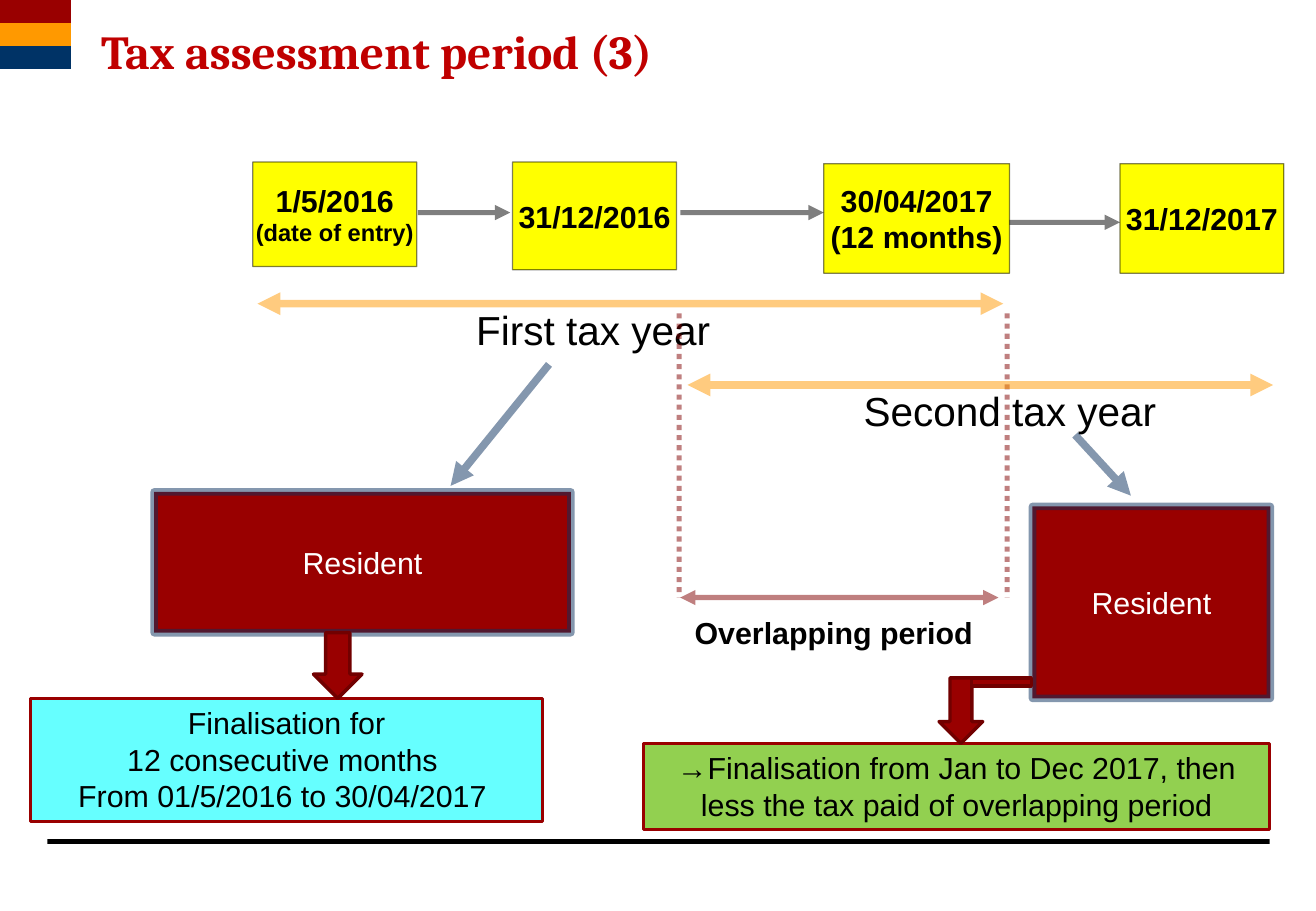
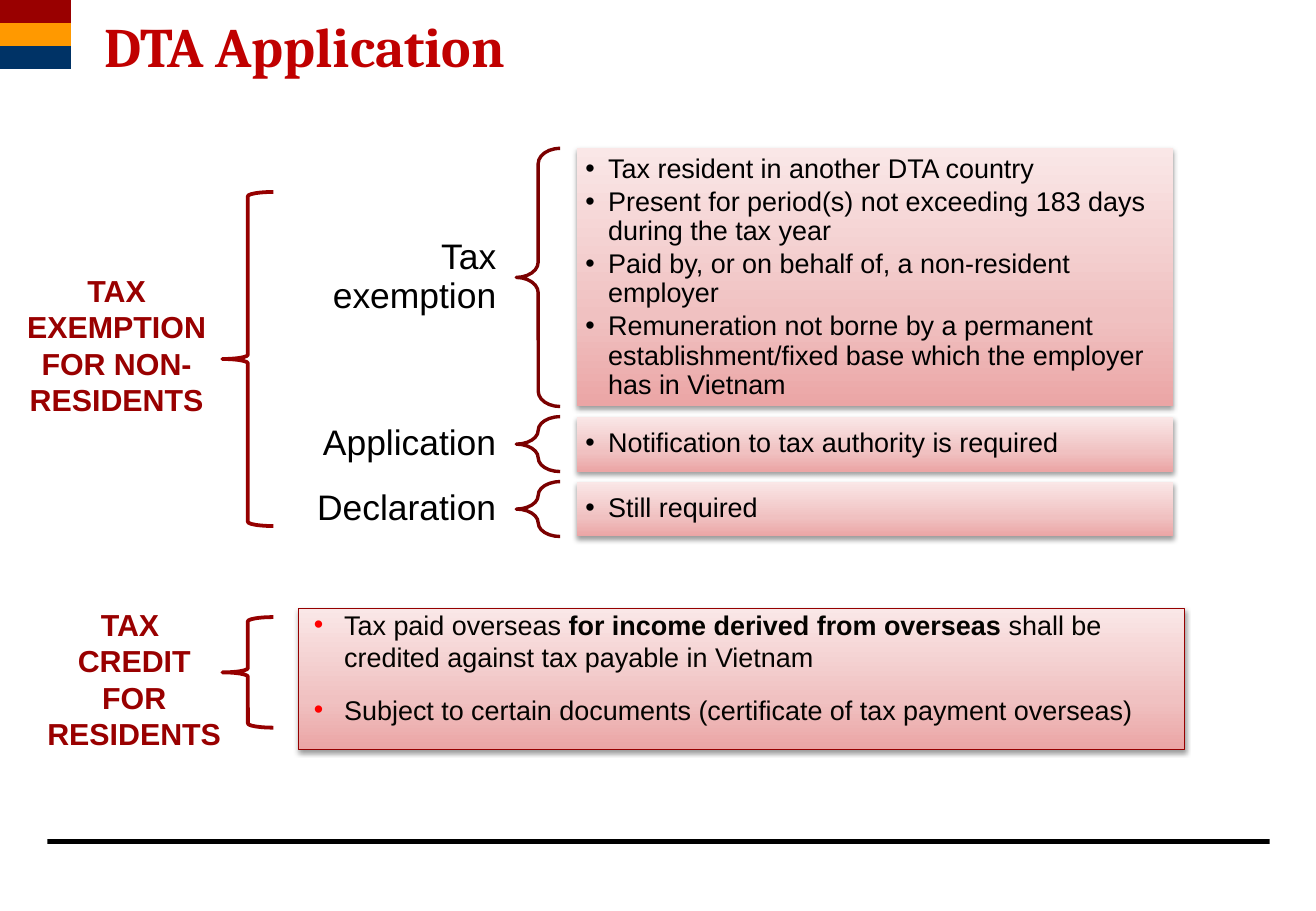
"""Build two slides on tax assessment periods and double tax agreements."""
from dataclasses import dataclass

from lxml import etree
from pptx import Presentation
from pptx import util as u
from pptx.dml.color import RGBColor
from pptx.enum import dml, shapes, text
from pptx.oxml.ns import qn


@dataclass(frozen=True)
class Theme:
    black: str = "000000"
    white: str = "FFFFFF"
    title: str = "C00000"
    maroon: str = "990000"
    orange: str = "FF9900"
    navy: str = "003366"
    yellow: str = "FFFF00"
    cyan: str = "66FFFF"
    green: str = "92D050"
    steel: str = "0A305E"
    overlap: str = "800000"
    arrow_edge: str = "710000"
    row_brace: str = "7B0000"
    group_brace: str = "960000"
    bullet: str = "FF0000"
    ink: str = "040300"
    blush: tuple = ((0, "EBA5A5"), (35, "F0C1C1"), (100, "FAE7E7"))
    font: str = "Arial"
    title_font: str = "Cambria"
    small: int = 14
    list_size: int = 16
    body: int = 18
    tag: int = 21
    label: int = 24


theme = Theme()
Shape = shapes.MSO_SHAPE
Anchor = text.MSO_ANCHOR
Align = text.PP_ALIGN


def write(box, *lines, size=theme.body, color=theme.black, font=theme.font, bold=False,
          align=Align.CENTER, anchor=Anchor.MIDDLE, wrap=True, inset=(7.2, 3.6, 7.2, 3.6),
          spacing=None, before=0, after=0, hang=None, bullet_color=None):
    """Write one paragraph per line; parts between double asterisks are bold."""
    frame = box.text_frame
    frame.auto_size = text.MSO_AUTO_SIZE.NONE
    frame.word_wrap = wrap
    frame.vertical_anchor = anchor
    (frame.margin_left, frame.margin_top,
     frame.margin_right, frame.margin_bottom) = map(u.Pt, inset)
    for index, line in enumerate(lines):
        para = frame.add_paragraph() if index else frame.paragraphs[0]
        para.alignment = align
        para.line_spacing = spacing
        para.space_before = u.Pt(before if index else 0)
        para.space_after = u.Pt(after)
        if hang:
            indent, step = map(u.Pt, hang)
            layout = para._p.get_or_add_pPr()
            layout.set("marL", str(indent))
            layout.set("indent", str(-step))
            tint = etree.SubElement(layout, qn("a:buClr"))
            etree.SubElement(tint, qn("a:srgbClr"), val=bullet_color or color)
            etree.SubElement(layout, qn("a:buFont"), typeface=theme.font)
            etree.SubElement(layout, qn("a:buChar"), char="•")
        for part, words in enumerate(line.split("**")):
            span = para.add_run()
            span.text = words
            span.font.name = font
            span.font.size = u.Pt(size)
            span.font.bold = bold or part % 2 == 1
            span.font.color.rgb = RGBColor.from_string(color)


def paint(item, fill=None, line=None, width=0.75, faded=False):
    """Set fill, line and shadow; a tuple of stops gives a shaded, shadowed panel."""
    parts = item.element.spPr
    if isinstance(fill, tuple):
        item.fill.gradient()
        item.fill.gradient_angle = 90
        stops = parts.find(".//" + qn("a:gsLst"))
        for stop in list(stops):
            stops.remove(stop)
        for position, color in fill:
            stop = etree.SubElement(stops, qn("a:gs"), pos=str(position * 1000))
            etree.SubElement(stop, qn("a:srgbClr"), val=color)
    elif fill:
        item.fill.solid()
        item.fill.fore_color.rgb = RGBColor.from_string(fill)
    elif hasattr(item, "fill"):
        item.fill.background()
    if line:
        item.line.color.rgb = RGBColor.from_string(line)
        item.line.width = u.Pt(width)
        if faded:
            color = parts.xpath("a:ln/a:solidFill/a:srgbClr")[0]
            etree.SubElement(color, qn("a:alpha"), val="50000")
    else:
        item.line.fill.background()
    effects = etree.SubElement(parts, qn("a:effectLst"))
    if isinstance(fill, tuple):
        shadow = etree.SubElement(effects, qn("a:outerShdw"), blurRad=str(u.Pt(3.1)),
                                  dist=str(u.Pt(1.6)), dir="5400000", rotWithShape="0")
        color = etree.SubElement(shadow, qn("a:srgbClr"), val=theme.black)
        etree.SubElement(color, qn("a:alpha"), val="38000")


deck = Presentation()
deck.slide_width, deck.slide_height = u.Pt(780), u.Pt(540)
period = deck.slides.add_slide(deck.slide_layouts[5])
treaty = deck.slides.add_slide(deck.slide_layouts[1])

bands = [((0, index * 13.6, 42, 13.6), color)
         for index, color in enumerate((theme.maroon, theme.orange, theme.navy))]
bands.append(((28, 497.4, 724.5, 2.8), theme.black))
for place, color in bands:
    band = period.shapes.add_shape(Shape.RECTANGLE, *map(u.Pt, place))
    paint(band, color)
    deck.slide_master.shapes.element.insert(2, band.element)

for page, words, left, top, size in (
    (period, "Tax assessment period (3)", 60, 0, 28),
    (treaty, "DTA Application", 62, -3, 33),
):
    title = page.shapes.title
    title.left, title.top, title.width, title.height = map(u.Pt, (left, top, 717, 62.6))
    write(title, words, size=size, color=theme.title, font=theme.title_font, bold=True,
          align=Align.LEFT, inset=(0, 2.9, 0, 0), spacing=0.85)

dates = (
    ((149.8, 96, 97.2, 62), ("1/5/2016", "(date of entry)")),
    ((303.8, 96, 97.2, 64), ("31/12/2016",)),
    ((488.2, 97, 110.2, 65), ("30/04/2017", "(12 months)")),
    ((663.8, 97, 97.2, 65), ("31/12/2017",)),
)
for place, lines in dates:
    box = period.shapes.add_shape(Shape.RECTANGLE, *map(u.Pt, place))
    paint(box, theme.yellow, theme.black, faded=True)
    write(box, *lines, bold=True, wrap=False)
    if "(date of entry)" in lines:
        box.text_frame.paragraphs[1].runs[0].font.size = u.Pt(theme.small)

for place in ((91.4, 291.6, 247, 83.5), (612, 300.2, 141, 113.8)):
    box = period.shapes.add_shape(Shape.RECTANGLE, *map(u.Pt, place))
    paint(box, theme.maroon, theme.steel, 4.5, faded=True)
    write(box, "Resident", color=theme.white, wrap=False)

for words, left, top, size, bold in (
    ("First tax year", 260.6, 180, theme.label, False),
    ("Second tax year", 507.6, 228.2, theme.label, False),
    ("Overlapping period", 403.2, 360, theme.body, True),
):
    box = period.shapes.add_textbox(*map(u.Pt, (left, top, 182, 30.2)))
    write(box, words, size=size, bold=bold, wrap=False)

one_way, two_way = ("tailEnd",), ("headEnd", "tailEnd")
lines = (
    ((402.5, 185.8, 402.5, 354.2), theme.overlap, 3, ()),
    ((596.9, 185.8, 596.9, 354.2), theme.overlap, 3, ()),
    ((403.2, 354.2, 591.8, 354.2), theme.overlap, 3, two_way),
    ((152.6, 180, 594.7, 180), theme.orange, 4.5, two_way),
    ((407.5, 228.2, 754.6, 228.2), theme.orange, 4.5, two_way),
    ((247.7, 126, 302.4, 126), theme.black, 3, one_way),
    ((403.2, 126, 488.2, 126), theme.black, 3, one_way),
    ((598.3, 131.8, 663.8, 131.8), theme.black, 3, one_way),
    ((325.4, 216, 267.1, 288), theme.steel, 4.5, one_way),
    ((637.2, 257.8, 670.3, 293.8), theme.steel, 4.5, one_way),
)
for ends, color, width, heads in lines:
    line = period.shapes.add_connector(shapes.MSO_CONNECTOR.STRAIGHT, *map(u.Pt, ends))
    paint(line, line=color, width=width, faded=True)
    if not heads:
        line.line.dash_style = dml.MSO_LINE.ROUND_DOT
    for head in heads:
        etree.SubElement(line.element.spPr.find(qn("a:ln")), qn("a:" + head), type="triangle")

for place, color, words in (
    ((18, 414, 303.8, 72.7), theme.cyan,
     ("Finalisation for", "12 consecutive months ", "From 01/5/2016 to 30/04/2017 ")),
    ((381.6, 440.6, 370.8, 51.1), theme.green,
     ("→Finalisation from Jan to Dec 2017, then less the tax paid of overlapping period",)),
):
    box = period.shapes.add_shape(Shape.RECTANGLE, *map(u.Pt, place))
    paint(box, color, theme.maroon, 1.75)
    write(box, *words, anchor=Anchor.TOP)

for kind, place in (
    (Shape.DOWN_ARROW, (185.8, 375.1, 28.8, 38.9)),
    (Shape.DOWN_ARROW, (556.6, 401.8, 25.9, 38.9)),
    (Shape.MATH_MINUS, (569.5, 394.6, 48.2, 19.4)),
):
    arrow = period.shapes.add_shape(kind, *map(u.Pt, place))
    paint(arrow, theme.maroon, theme.arrow_edge, 2)

top, gap = 88, 6
for tag, height, points in (
    ("Tax exemption", 153, (
        "Tax resident in another DTA country",
        "Present for period(s) not exceeding 183 days during the tax year",
        "Paid by, or on behalf of, a non-resident employer",
        "Remuneration not borne by a permanent establishment/fixed base "
        "which the employer has in Vietnam")),
    ("Application", 32.5, ("Notification to tax authority is required",)),
    ("Declaration", 32.5, ("Still required",)),
):
    box = treaty.shapes.add_textbox(*map(u.Pt, (175.7, top, 130, height)))
    write(box, tag, size=theme.tag, align=Align.RIGHT, inset=(11.5, 4.3, 11.5, 4.3), spacing=0.9)
    brace = treaty.shapes.add_shape(Shape.LEFT_BRACE, *map(u.Pt, (306, top, 26, height)))
    brace.adjustments[0] = 0.35
    paint(brace, line=theme.row_brace, width=2)
    panel = treaty.shapes.add_shape(Shape.RECTANGLE, *map(u.Pt, (342, top, 353.5, height)))
    paint(panel, theme.blush)
    write(panel, *points, size=theme.list_size, align=Align.LEFT, inset=(5, 5, 5, 5),
          spacing=0.9, after=2.4, hang=(13.5, 13.5))
    top += height + gap

credit = treaty.placeholders[1]
credit.left, credit.top, credit.width, credit.height = map(u.Pt, (177, 360.7, 525, 83.5))
paint(credit, theme.blush, theme.group_brace)
write(credit,
      "Tax paid overseas **for income derived from overseas** shall be credited "
      "against tax payable in Vietnam",
      "Subject to certain documents (certificate of tax payment overseas)",
      size=theme.list_size, color=theme.ink, align=Align.LEFT, anchor=Anchor.TOP,
      inset=(0, 0, 0, 0), spacing=1.0, before=6, after=6, hang=(27, 18),
      bullet_color=theme.bullet)

for brace_top, brace_height, place, words in (
    (113.8, 198, (6.5, 157.7, 125.3, 94.3), ("TAX EXEMPTION FOR NON-RESIDENTS",)),
    (365.8, 65.5, (20.9, 355.7, 117.4, 94.3), ("TAX ", "CREDIT FOR RESIDENTS")),
):
    brace = treaty.shapes.add_shape(
        Shape.LEFT_BRACE, *map(u.Pt, (131.8, brace_top, 30.2, brace_height)))
    paint(brace, line=theme.group_brace, width=2.25)
    box = treaty.shapes.add_textbox(*map(u.Pt, place))
    write(box, *words, color=theme.maroon, bold=True, anchor=Anchor.TOP)

deck.save("out.pptx")
